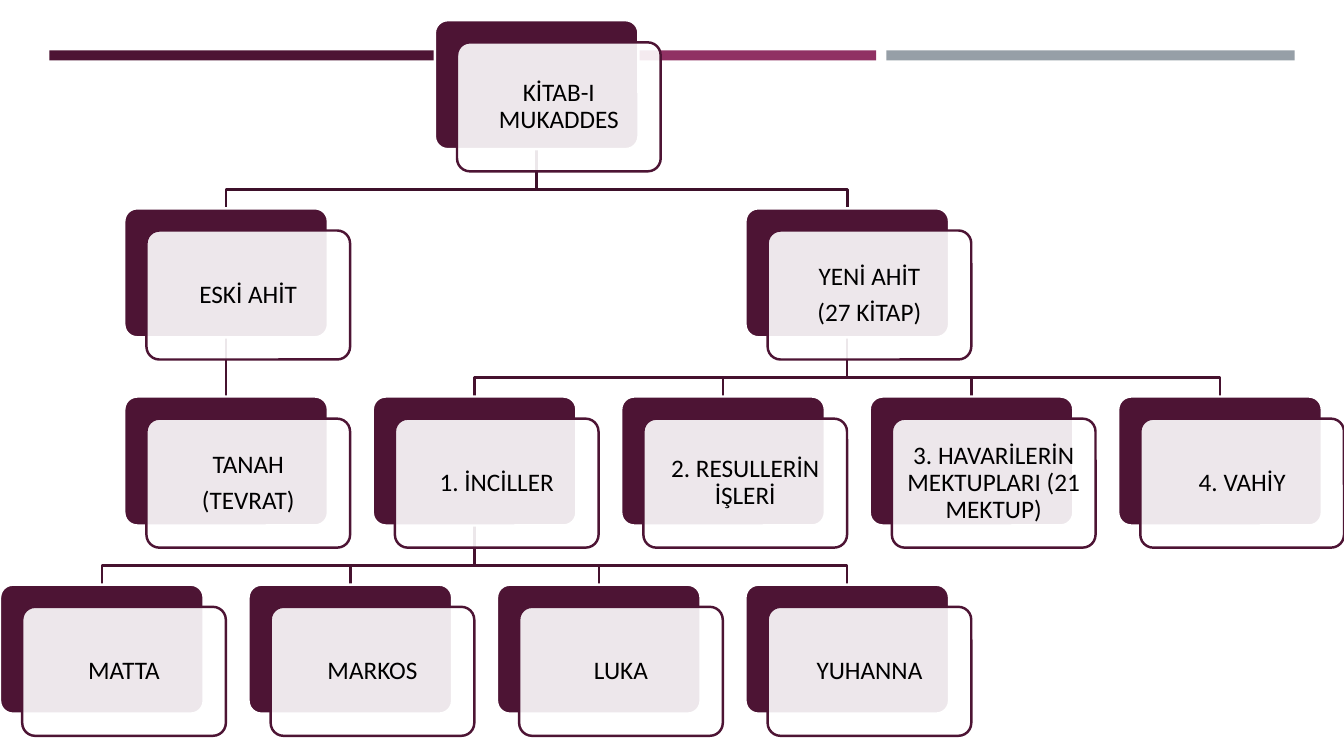
from dataclasses import dataclass

from lxml.etree import SubElement
from pptx import Presentation
from pptx.dml.color import RGBColor
from pptx.enum.shapes import MSO_CONNECTOR, MSO_SHAPE
from pptx.enum.text import MSO_ANCHOR, PP_ALIGN
from pptx.oxml.ns import qn
from pptx.util import Inches, Pt


@dataclass(frozen=True)
class Theme:
    plum: str = "4D1434"
    magenta: str = "903163"
    grey: str = "969FA7"
    white: str = "FFFFFF"
    black: str = "000000"
    root_link: str = "3E102A"
    link: str = "46122F"
    font: str = "Calibri"
    label_size: float = 18
    line_width: float = 1.75


@dataclass(frozen=True)
class Box:
    left: float
    top: float
    width: float
    height: float

    def emu(self):
        return [Inches(v) for v in (self.left, self.top, self.width, self.height)]


@dataclass
class Book:
    lines: tuple
    children: tuple = ()
    leaf_column: float = 0

    @property
    def column(self):
        """A parent stands midway between its first and last child."""
        if not self.children:
            return self.leaf_column
        return (self.children[0].column + self.children[-1].column) / 2


THEME = Theme()
SLIDE_WIDTH, SLIDE_HEIGHT = 13.33, 7.5

# Card size and the shift of the front card; the tree spans 4 rows, 5.5 columns
CARD_WIDTH, CARD_HEIGHT, SHIFT = 2.02, 1.28, 0.22
COLUMN_STEPS, ROW_STEPS = 4.5, 3
BEND_SHARE = 0.68

GOSPELS = Book(("1. İNCİLLER",), tuple(
    Book((name,), leaf_column=column)
    for column, name in enumerate(("MATTA", "MARKOS", "LUKA", "YUHANNA"))))
OLD_TESTAMENT = Book(("ESKİ AHİT",), (
    Book(("TANAH", "(TEVRAT)"), leaf_column=0.5),))
NEW_TESTAMENT = Book(("YENİ AHİT", "(27 KİTAP)"), (
    GOSPELS,
    Book(("2. RESULLERİN İŞLERİ",), leaf_column=2.5),
    Book(("3. HAVARİLERİN MEKTUPLARI (21 MEKTUP)",), leaf_column=3.5),
    Book(("4. VAHİY",), leaf_column=4.5)))
BIBLE = Book(("KİTAB-I MUKADDES",), (OLD_TESTAMENT, NEW_TESTAMENT))


def rgb(value):
    return RGBColor.from_string(value)


def write_text(shape, lines, *, size=THEME.label_size, color=THEME.black,
               font=THEME.font, align=PP_ALIGN.CENTER, inset=0.07):
    frame = shape.text_frame
    frame.word_wrap = True
    frame.vertical_anchor = MSO_ANCHOR.MIDDLE
    frame.margin_left = frame.margin_right = Inches(inset)
    frame.margin_top = frame.margin_bottom = Inches(inset)
    for index, line in enumerate(lines):
        paragraph = frame.add_paragraph() if index else frame.paragraphs[0]
        paragraph.alignment = align
        paragraph.line_spacing = 0.9
        paragraph.space_after = Pt(0.35 * size)
        run = paragraph.add_run()
        run.text = line
        run.font.size = Pt(size)
        run.font.name = font
        run.font.color.rgb = rgb(color)


def add_panel(slide, kind, box, *, fill, line=None, opacity=100):
    panel = slide.shapes.add_shape(kind, *box.emu())
    panel.shadow.inherit = False
    panel.fill.solid()
    panel.fill.fore_color.rgb = rgb(fill)
    if opacity < 100:
        color = panel.element.spPr.find(qn("a:solidFill")).find(qn("a:srgbClr"))
        SubElement(color, qn("a:alpha"), val=str(opacity * 1000))
    if line:
        panel.line.color.rgb = rgb(line)
        panel.line.width = Pt(THEME.line_width)
    else:
        panel.line.fill.background()
    return panel


def add_header_bars(slide, box):
    gap = 0.1
    width = (box.width - 2 * gap) / 3
    for index, color in enumerate((THEME.plum, THEME.magenta, THEME.grey)):
        bar = Box(box.left + index * (width + gap), box.top, width, box.height)
        add_panel(slide, MSO_SHAPE.RECTANGLE, bar, fill=color)


def add_link(slide, parent, child, color):
    """Joins the foot of one card to the head of the card below it."""
    start_x = Inches(parent.left + parent.width / 2)
    start_y = Inches(parent.top + parent.height)
    end_x, end_y = Inches(child.left + child.width / 2), Inches(child.top)
    if start_x == end_x:
        link = slide.shapes.add_connector(
            MSO_CONNECTOR.STRAIGHT, start_x, start_y, end_x, end_y)
        SubElement(link.element.spPr, qn("a:effectLst"))
    else:
        bend_y = start_y + int((end_y - start_y) * BEND_SHARE)
        builder = slide.shapes.build_freeform(start_x, start_y)
        builder.add_line_segments(
            [(start_x, bend_y), (end_x, bend_y), (end_x, end_y)], close=False)
        link = builder.convert_to_shape()
        link.fill.background()
        link.shadow.inherit = False
    link.line.color.rgb = rgb(color)
    link.line.width = Pt(THEME.line_width)


def add_card(slide, box, lines):
    front = Box(box.left + SHIFT, box.top + SHIFT, box.width, box.height)
    back_card = add_panel(slide, MSO_SHAPE.ROUNDED_RECTANGLE, box,
                          fill=THEME.plum, line=THEME.white)
    front_card = add_panel(slide, MSO_SHAPE.ROUNDED_RECTANGLE, front,
                           fill=THEME.white, line=THEME.plum, opacity=90)
    for card in (back_card, front_card):
        card.adjustments[0] = 0.1
    write_text(front_card, lines)


def add_book_tree(slide, box, root):
    column_step = (box.width - CARD_WIDTH - SHIFT) / COLUMN_STEPS
    row_step = (box.height - CARD_HEIGHT - SHIFT) / ROW_STEPS

    def place(book, row):
        return Box(box.left + book.column * column_step,
                   box.top + row * row_step, CARD_WIDTH, CARD_HEIGHT)

    def walk(book, row=0):
        yield book, row
        for child in book.children:
            yield from walk(child, row + 1)

    # Links lie behind all cards
    for book, row in walk(root):
        color = THEME.link if row else THEME.root_link
        for child in book.children:
            add_link(slide, place(book, row), place(child, row + 1), color)
    for book, row in walk(root):
        add_card(slide, place(book, row), book.lines)


def main():
    deck = Presentation()
    deck.slide_width, deck.slide_height = Inches(SLIDE_WIDTH), Inches(SLIDE_HEIGHT)
    slide = deck.slides.add_slide(deck.slide_layouts[6])
    add_header_bars(slide, Box(0.49, 0.5, 12.35, 0.1))
    add_book_tree(slide, Box(0, 0.2, SLIDE_WIDTH, 7.1), BIBLE)
    deck.save("out.pptx")


if __name__ == "__main__":
    main()
